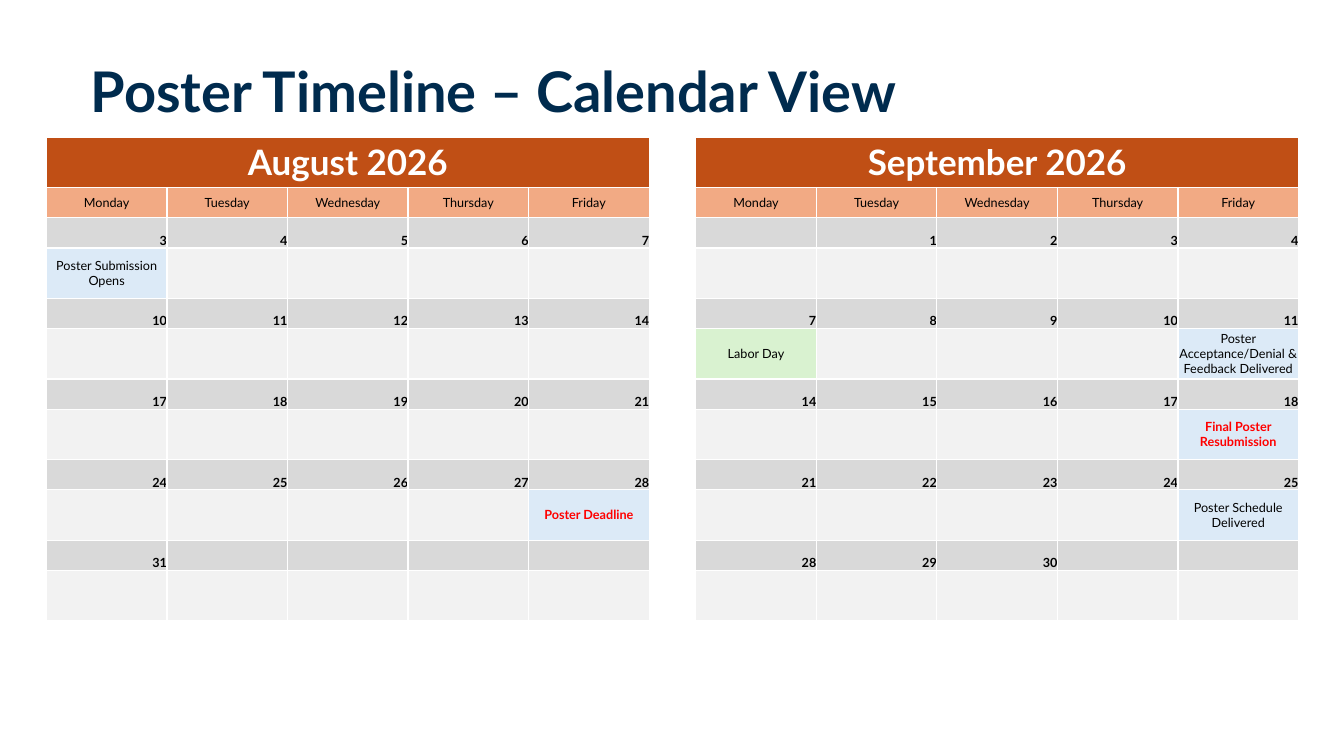
"""Build the poster timeline slide with two month calendars."""
import lxml.etree
import pptx
import pptx.dml.color
import pptx.enum.text
import pptx.oxml.ns
import pptx.util

Inches = pptx.util.Inches
Pt = pptx.util.Pt
Align = pptx.enum.text.PP_ALIGN
Anchor = pptx.enum.text.MSO_ANCHOR

WEEKDAYS = ["Monday", "Tuesday", "Wednesday", "Thursday", "Friday"]
WEEKS = 5


def color(hex_value):
    return pptx.dml.color.RGBColor.from_string(hex_value)


class CalendarSlide:
    font = "Lato"
    navy, black, white, red = "002B4E", "000000", "FFFFFF", "FF0000"
    month_fill, weekday_fill = "C04F15", "F2AA84"
    date_fill, day_fill = "D9D9D9", "F2F2F2"
    event_fill, holiday_fill = "DCEAF7", "D9F2D0"

    def __init__(self, deck):
        self.slide = deck.slides.add_slide(deck.slide_layouts[5])

    def add_text(self, paragraph, text, size, ink, bold):
        run = paragraph.add_run()
        run.text = text
        run.font.name = self.font
        run.font.size = Pt(size)
        run.font.bold = bold
        run.font.color.rgb = color(ink)

    def title(self, text):
        heading = self.slide.shapes.title
        heading.left, heading.top = Inches(0.8), Inches(0.59)
        heading.width, heading.height = Inches(11.73), Inches(0.76)
        frame = heading.text_frame
        frame.word_wrap = True
        frame.auto_size = pptx.enum.text.MSO_AUTO_SIZE.NONE
        frame.vertical_anchor = Anchor.TOP
        paragraph = frame.paragraphs[0]
        paragraph.alignment = Align.LEFT
        paragraph.line_spacing = 0.9
        self.add_text(paragraph, text, 40, self.navy, True)

    def borders(self, cell):
        properties = cell._tc.get_or_add_tcPr()
        for side in ("a:lnL", "a:lnR", "a:lnT", "a:lnB"):
            line = lxml.etree.SubElement(properties, pptx.oxml.ns.qn(side), w=str(Pt(1)))
            fill = lxml.etree.SubElement(line, pptx.oxml.ns.qn("a:solidFill"))
            lxml.etree.SubElement(fill, pptx.oxml.ns.qn("a:srgbClr"), val=self.white)

    def cell(self, cell, fill, text="", size=9, ink=black, bold=False,
             align=Align.CENTER, anchor=Anchor.MIDDLE):
        self.borders(cell)
        cell.fill.solid()
        cell.fill.fore_color.rgb = color(fill)
        cell.margin_left = cell.margin_right = cell.margin_top = cell.margin_bottom = 0
        cell.vertical_anchor = anchor
        paragraph = cell.text_frame.paragraphs[0]
        paragraph.alignment = align
        if text:
            self.add_text(paragraph, text, size, ink, bold)
        else:
            lxml.etree.SubElement(paragraph._p, pptx.oxml.ns.qn("a:endParaRPr"), sz=str(size * 100))

    def month(self, left, name, first_monday, last_day, events):
        heights = [0.5, 0.3] + [0.3, 0.5] * WEEKS
        grid = self.slide.shapes.add_table(
            len(heights), len(WEEKDAYS), Inches(left), Inches(1.36),
            Inches(5.98), Inches(sum(heights))).table
        grid.first_row = grid.horz_banding = False
        for row, height in zip(grid.rows, heights):
            row.height = Inches(height)

        for column, weekday in enumerate(WEEKDAYS):
            grid.columns[column].width = Inches(5.98 / len(WEEKDAYS))
            self.cell(grid.cell(0, column), self.month_fill, name if column == 0 else "",
                      25, self.white, True)
            self.cell(grid.cell(1, column), self.weekday_fill, weekday)
            for week in range(WEEKS):
                day = first_monday + 7 * week + column
                date = str(day) if 1 <= day <= last_day else ""
                self.cell(grid.cell(2 + 2 * week, column), self.date_fill, date,
                          bold=True, align=Align.RIGHT, anchor=Anchor.BOTTOM)
                event, fill, urgent = events.get(day, ("", self.day_fill, False))
                self.cell(grid.cell(3 + 2 * week, column), fill, event,
                          ink=self.red if urgent else self.black, bold=urgent)
        grid.cell(0, 0).merge(grid.cell(0, len(WEEKDAYS) - 1))


def main():
    deck = pptx.Presentation()
    deck.slide_width, deck.slide_height = Inches(13.33), Inches(7.5)
    timeline = CalendarSlide(deck)
    event, holiday = timeline.event_fill, timeline.holiday_fill
    timeline.title("Poster Timeline – Calendar View")
    timeline.month(6.9, "September 2026", 0, 30, {
        7: ("Labor Day", holiday, False),
        11: ("Poster Acceptance/Denial & Feedback Delivered", event, False),
        18: ("Final Poster Resubmission", event, True),
        25: ("Poster Schedule Delivered", event, False),
    })
    timeline.month(0.46, "August 2026", 3, 31, {
        3: ("Poster Submission Opens", event, False),
        28: ("Poster Deadline", event, True),
    })
    deck.save("out.pptx")


if __name__ == "__main__":
    main()
